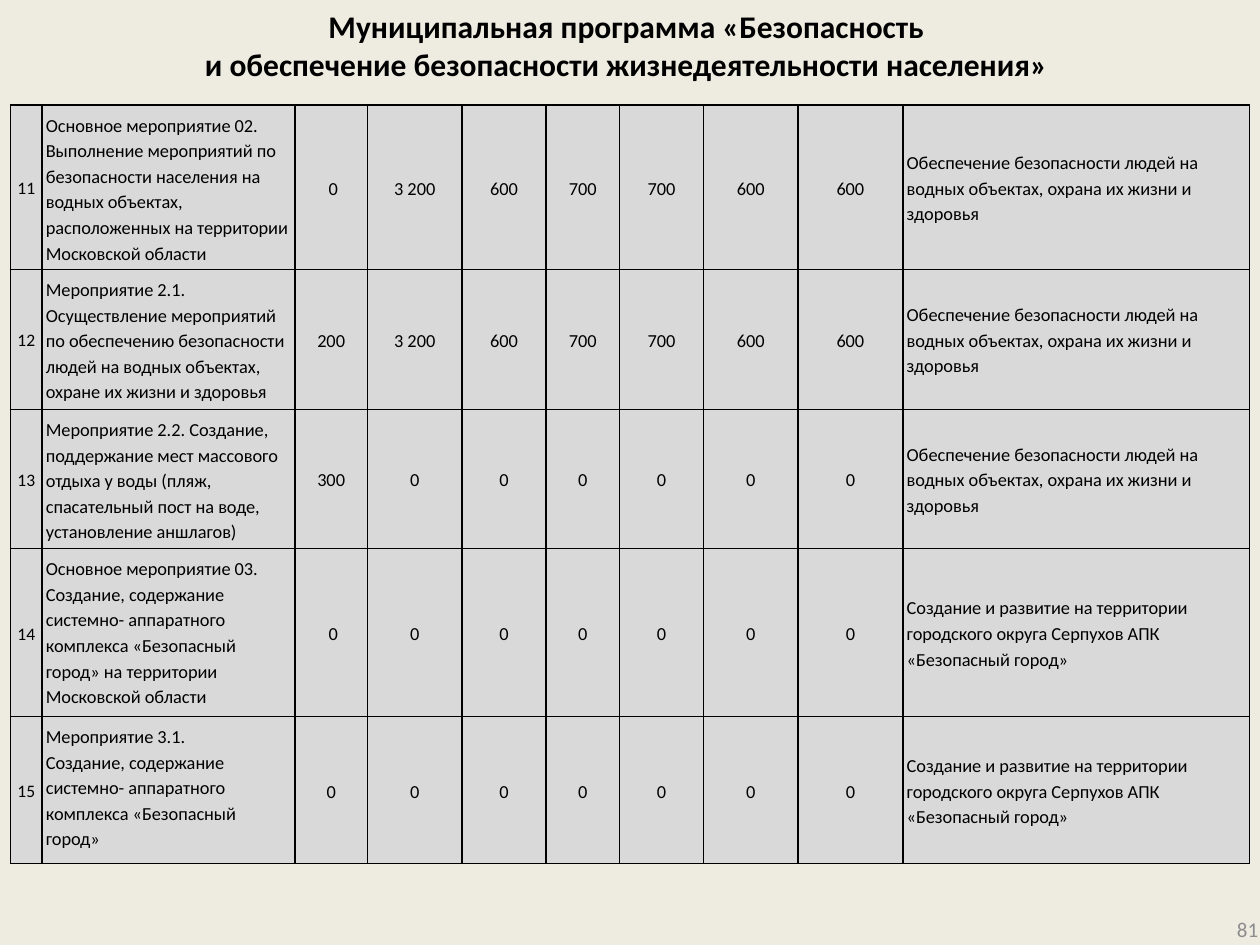
"""Build the programme table slide on public safety."""
from dataclasses import dataclass

from lxml import etree
from pptx import Presentation
from pptx import util as u
from pptx.dml.color import RGBColor
from pptx.enum import text
from pptx.oxml import ns


@dataclass(frozen=True)
class Theme:
    font: str = "Calibri"
    background: str = "EEECE1"
    cell: str = "D9D9D9"
    ink: str = "000000"
    muted: str = "8C8C8C"
    title_size: float = 18
    body_size: float = 10.5
    index_size: float = 10
    page_size: float = 12
    border: float = 1


THEME = Theme()
LEFT, CENTER, RIGHT = text.PP_ALIGN.LEFT, text.PP_ALIGN.CENTER, text.PP_ALIGN.RIGHT
MIDDLE, TOP = text.MSO_ANCHOR.MIDDLE, text.MSO_ANCHOR.TOP

TITLE = "Муниципальная программа «Безопасность \vи обеспечение безопасности жизнедеятельности населения» "
WATER = "Обеспечение безопасности людей на водных объектах, охрана их жизни и здоровья"
CITY = "Создание и развитие на территории городского округа Серпухов АПК «Безопасный город»"
FUNDED = ["3 200", "600", "700", "700", "600", "600"]
UNFUNDED = ["0"] * 6

COLUMN_WIDTHS = [18, 144.5, 41.5, 54, 48, 42, 48, 54, 60, 198]
ROW_HEIGHTS = [93, 80, 78, 96, 84]
MEASURES = [
    ("Основное мероприятие 02.\nВыполнение мероприятий по безопасности населения на водных объектах, "
     "расположенных на территории Московской области", " 0", FUNDED, WATER),
    ("Мероприятие 2.1.\nОсуществление мероприятий по обеспечению безопасности людей на водных объектах, "
     "охране их жизни и здоровья", "200", FUNDED, WATER),
    ("Мероприятие 2.2. Создание, поддержание мест массового отдыха у воды (пляж, спасательный пост на воде, "
     "установление аншлагов)", "300", UNFUNDED, WATER),
    ("Основное мероприятие 03.\nСоздание, содержание системно- аппаратного комплекса «Безопасный город» "
     "на территории Московской области", " 0", UNFUNDED, CITY),
    ("Мероприятие 3.1.\nСоздание, содержание системно- аппаратного комплекса «Безопасный город»",
     "0", UNFUNDED, CITY),
]
FIRST_NUMBER = 11


def apply(target, values):
    for name, value in values.items():
        setattr(target, name, value)


def write(frame, content, size, color=THEME.ink, bold=False, **paragraph_format):
    frame.text = content
    for paragraph in frame.paragraphs:
        apply(paragraph, paragraph_format)
        for run in paragraph.runs:
            apply(run.font, {"name": THEME.font, "size": u.Pt(size), "bold": bold})
            run.font.color.rgb = RGBColor.from_string(color)


def add_text(slide, box, content, size, **text_format):
    shape = slide.shapes.add_textbox(*map(u.Pt, box))
    apply(shape.text_frame, {"word_wrap": True, "vertical_anchor": MIDDLE})
    write(shape.text_frame, content, size, **text_format)


def add_borders(cell):
    properties = cell._tc.get_or_add_tcPr()
    for side in ("a:lnL", "a:lnR", "a:lnT", "a:lnB"):
        line = etree.SubElement(properties, ns.qn(side), w=str(u.Pt(THEME.border)))
        fill = etree.SubElement(line, ns.qn("a:solidFill"))
        etree.SubElement(fill, ns.qn("a:srgbClr"), val=THEME.ink)


def fill_cell(cell, content, size=THEME.body_size, alignment=CENTER, anchor=MIDDLE):
    add_borders(cell)
    cell.fill.solid()
    cell.fill.fore_color.rgb = RGBColor.from_string(THEME.cell)
    apply(cell, {"margin_left": u.Pt(2.2), "margin_right": u.Pt(2.2),
                 "margin_top": u.Pt(3.6), "margin_bottom": u.Pt(3.6), "vertical_anchor": anchor})
    write(cell.text_frame, content, size, alignment=alignment, line_spacing=1.15)


def add_measures(slide, left, top):
    frame = slide.shapes.add_table(len(MEASURES), len(COLUMN_WIDTHS), u.Pt(left), u.Pt(top),
                                   u.Pt(sum(COLUMN_WIDTHS)), u.Pt(sum(ROW_HEIGHTS)))
    table = frame.table
    apply(table, {"first_row": False, "horz_banding": False})
    for column, width in zip(table.columns, COLUMN_WIDTHS):
        column.width = u.Pt(width)
    for row, height in zip(table.rows, ROW_HEIGHTS):
        row.height = u.Pt(height)

    last = len(COLUMN_WIDTHS) - 1
    formats = {0: {"size": THEME.index_size},
               1: {"alignment": LEFT, "anchor": TOP},
               last: {"alignment": LEFT}}
    for index, (measure, before, amounts, result) in enumerate(MEASURES):
        contents = [str(FIRST_NUMBER + index), measure, before, *amounts, result]
        for column, content in enumerate(contents):
            fill_cell(table.cell(index, column), content, **formats.get(column, {}))


def main():
    presentation = Presentation()
    apply(presentation, {"slide_width": u.Pt(720), "slide_height": u.Pt(540)})
    slide = presentation.slides.add_slide(presentation.slide_layouts[6])
    slide.background.fill.solid()
    slide.background.fill.fore_color.rgb = RGBColor.from_string(THEME.background)

    add_text(slide, (36, 3, 648, 45.5), TITLE, THEME.title_size, bold=True, alignment=CENTER)
    add_measures(slide, 6, 60)
    add_text(slide, (558, 516.5, 168, 28.5), "81", THEME.page_size, color=THEME.muted, alignment=RIGHT)
    presentation.save("out.pptx")


if __name__ == "__main__":
    main()
